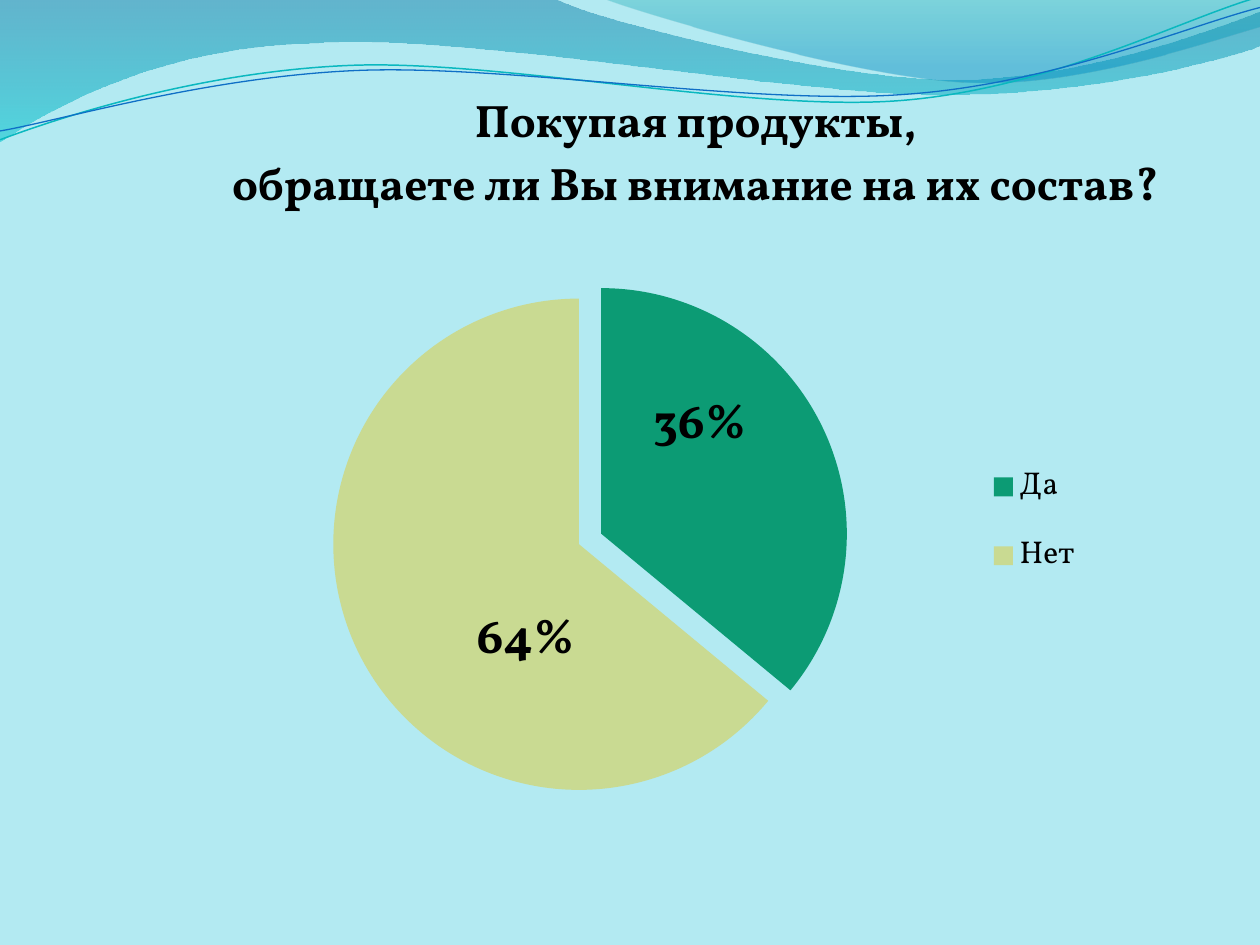
import math
from dataclasses import dataclass

from lxml import etree
from pptx import Presentation
from pptx.chart.data import CategoryChartData
from pptx.dml.color import RGBColor
from pptx.enum.chart import XL_CHART_TYPE, XL_LABEL_POSITION, XL_LEGEND_POSITION
from pptx.enum.text import PP_ALIGN
from pptx.oxml import parse_xml
from pptx.oxml.ns import nsdecls, qn
from pptx.util import Inches, Pt

PIE = XL_CHART_TYPE.PIE
CENTER_LABEL = XL_LABEL_POSITION.CENTER
LEGEND_RIGHT = XL_LEGEND_POSITION.RIGHT
CENTERED = PP_ALIGN.CENTER


@dataclass(frozen=True)
class Theme:
    font: str = "Vollkorn"
    background: str = "B3EAF2"
    text: str = "000000"
    teal_line: str = "0AB8BF"
    blue_line: str = "0F6FC6"
    slices: tuple = ("0C9B74", "C9DA92")
    title_size: int = 26
    label_size: int = 28
    legend_size: int = 18


# Each outline is a start point followed by lines (x, y) and Bezier curves
# (control 1, control 2, end), all in inches.
WIDE_WAVE = [
    (0, 0), (4.4, -0.01),
    (4.76, 0.17, 6.64, 0.63, 7.58, 0.63), (8.53, 0.63, 9.58, 0.26, 10, 0.09),
    (10.01, 0.36),
    (9.83, 0.44, 8.7, 0.76, 7.46, 0.75), (6.22, 0.75, 3.82, 0.28, 2.57, 0.34),
    (1.29, 0.36, 0.46, 0.83, -0.01, 1.13), (0, 0),
]
RIGHT_WAVE = [
    (4.79, -0.01),
    (5.09, 0.11, 6.82, 0.62, 7.69, 0.65), (8.56, 0.69, 9.61, 0.32, 10, 0.21),
    (10, 0), (4.79, -0.01),
]
TEAL_CURVE = [
    (0, 1.11),
    (0.48, 0.93, 1.58, 0.57, 2.77, 0.52), (3.95, 0.47, 5.93, 0.89, 7.13, 0.8),
    (8.33, 0.71, 9.38, 0.15, 9.98, -0.02),
]
BLUE_CURVE = [
    (0, 1.04),
    (0.47, 0.96, 1.64, 0.61, 2.83, 0.56), (4.03, 0.51, 5.97, 0.84, 7.17, 0.75),
    (8.36, 0.67, 9.41, 0.21, 10, 0.06),
]


def pairs(segment):
    return list(zip(segment[::2], segment[1::2]))


def turn_back(outline, tilt, center=(5, 0.58)):
    """Undo a rotation by tilt degrees around the center."""
    cosine, sine = math.cos(math.radians(tilt)), math.sin(math.radians(tilt))
    level = []
    for segment in outline:
        turned = []
        for x, y in pairs(segment):
            across, down = x - center[0], y - center[1]
            turned += [center[0] + across * cosine + down * sine,
                       center[1] - across * sine + down * cosine]
        level.append(turned)
    return level


def manual_layout(inner=False, **fractions):
    """Return a c:layout; x, y, w and h are fractions of the chart."""
    parts = '<c:layoutTarget val="inner"/>' if inner else ""
    if "w" in fractions:
        parts += '<c:xMode val="edge"/><c:yMode val="edge"/>'
    parts += "".join(f'<c:{name} val="{value}"/>' for name, value in fractions.items())
    return parse_xml(f'<c:layout {nsdecls("c")}><c:manualLayout>{parts}'
                     '</c:manualLayout></c:layout>')


def put_layout(parent, layout, after=None):
    """Replace the layout of a chart part, placing it after the named child."""
    for old in parent.findall(qn("c:layout")):
        parent.remove(old)
    if after is None:
        parent.insert(0, layout)
    else:
        parent.find(qn(after)).addnext(layout)


class SlideBuilder:
    def __init__(self, slide, theme):
        self.slide = slide
        self.theme = theme
        self.fill(slide.background.fill, theme.background)

    def fill(self, fill, color):
        fill.solid()
        fill.fore_color.rgb = RGBColor.from_string(color)

    def style(self, font, size, bold=False):
        font.name = self.theme.font
        font.size = Pt(size)
        font.bold = bold
        font.color.rgb = RGBColor.from_string(self.theme.text)

    def outline(self, outline, close):
        """Build a freeform through the end points, then bend its curved sides."""
        start, *ends = [(Inches(s[-2]), Inches(s[-1])) for s in outline]
        builder = self.slide.shapes.build_freeform(*start)
        builder.add_line_segments(ends, close=close)
        shape = builder.convert_to_shape()
        shape.shadow.inherit = False
        sides = list(shape.element.spPr.iter(qn("a:lnTo")))
        for side, segment in zip(sides, outline[1:]):
            if len(segment) == 6:
                side.tag = qn("a:cubicBezTo")
                for index, (x, y) in enumerate(pairs(segment)[:2]):
                    control = etree.Element(qn("a:pt"), x=str(Inches(x) - shape.left),
                                            y=str(Inches(y) - shape.top))
                    side.insert(index, control)
        return shape

    def wave(self, outline, stops):
        """Draw a filled wave; stops are (position, color, opacity in percent)."""
        shape = self.outline(outline, close=True)
        shape.line.fill.background()
        shape.fill.gradient()
        shape.fill.gradient_angle = 270
        for stop, (position, color, _) in zip(shape.fill.gradient_stops, stops):
            stop.position = position
            stop.color.rgb = RGBColor.from_string(color)
        colors = shape.element.spPr.iter(qn("a:srgbClr"))
        for color, (_, _, opacity) in zip(colors, stops):
            etree.SubElement(color, qn("a:alpha")).set("val", str(opacity * 1000))

    def curve(self, outline, color, width, tilt=357.3):
        """Draw an open curve, level in its own frame and turned by tilt."""
        shape = self.outline(turn_back(outline, tilt), close=False)
        shape.rotation = tilt
        shape.fill.background()
        shape.line.color.rgb = RGBColor.from_string(color)
        shape.line.width = Pt(width)

    def title(self, lines, left, top, width, height):
        box = self.slide.shapes.add_textbox(
            Inches(left), Inches(top), Inches(width), Inches(height))
        frame = box.text_frame
        frame.word_wrap = True
        frame.text = "\n".join(lines)
        for para in frame.paragraphs:
            para.alignment = CENTERED
            para.space_before = Pt(0.2 * self.theme.title_size)
            para._p.get_or_add_pPr().set("marL", str(Inches(0.12)))
            for span in para.runs:
                self.style(span.font, self.theme.title_size, bold=True)

    def pie(self, answers, label_shifts, left, top, width, height):
        data = CategoryChartData()
        data.categories = list(answers)
        data.add_series("Series 1", list(answers.values()))
        chart = self.slide.shapes.add_chart(
            PIE, Inches(left), Inches(top), Inches(width), Inches(height), data).chart
        self.style(chart.font, self.theme.legend_size)
        chart.has_title = False
        chart.has_legend = True
        chart.legend.position = LEGEND_RIGHT
        chart.legend.include_in_layout = False
        put_layout(chart.legend._element, manual_layout(x=0.86, y=0.35, w=0.13, h=0.29),
                   after="c:legendPos")
        plot = chart.plots[0]
        plot.vary_by_categories = True
        put_layout(plot._element.getparent(),
                   manual_layout(inner=True, x=0.09 / width, y=0.43 / height,
                                 w=5.47 / width, h=3.9 / height))

        series = plot.series[0]
        for index, color in enumerate(self.theme.slices):
            self.fill(series.points[index].format.fill, color)
        first_slice = series._element.find(qn("c:dPt"))
        first_slice.find(qn("c:spPr")).addprevious(
            parse_xml(f'<c:explosion {nsdecls("c")} val="10"/>'))

        labels = series.data_labels
        labels.show_percentage = True
        labels.show_value = False
        labels.number_format = "0%"
        labels.number_format_is_linked = False
        labels.position = CENTER_LABEL
        self.style(labels.font, self.theme.label_size, bold=True)
        for index, (right, down) in enumerate(label_shifts):
            label = series.points[index].data_label
            self.style(label.font, self.theme.label_size, bold=True)
            label.position = CENTER_LABEL
            element = labels._element.findall(qn("c:dLbl"))[index]
            element.find(qn("c:showVal")).set("val", "0")
            element.find(qn("c:showPercent")).set("val", "1")
            put_layout(element, manual_layout(x=right / width, y=down / height),
                       after="c:idx")


def main():
    theme = Theme()
    deck = Presentation()
    deck.slide_width, deck.slide_height = Inches(10), Inches(7.5)
    page = SlideBuilder(deck.slides.add_slide(deck.slide_layouts[6]), theme)
    page.wave(WIDE_WAVE, [(0, "0074A1", 45), (1, "00C6CF", 55)])
    page.wave(RIGHT_WAVE, [(0, "00A1A9", 30), (0.8, "008BBF", 45)])
    page.curve(TEAL_CURVE, theme.teal_line, 0.85)
    page.curve(BLUE_CURVE, theme.blue_line, 0.75)
    page.title(["Покупая продукты, ", "обращаете ли Вы внимание на их состав? "],
               1, 0.68, 9, 1.87)
    page.pie({"Да": 36, "Нет": 64}, [(-0.1, -0.44), (0.46, 0.35)],
             1.77, 1.94, 6.96, 4.44)
    deck.save("out.pptx")


if __name__ == "__main__":
    main()
